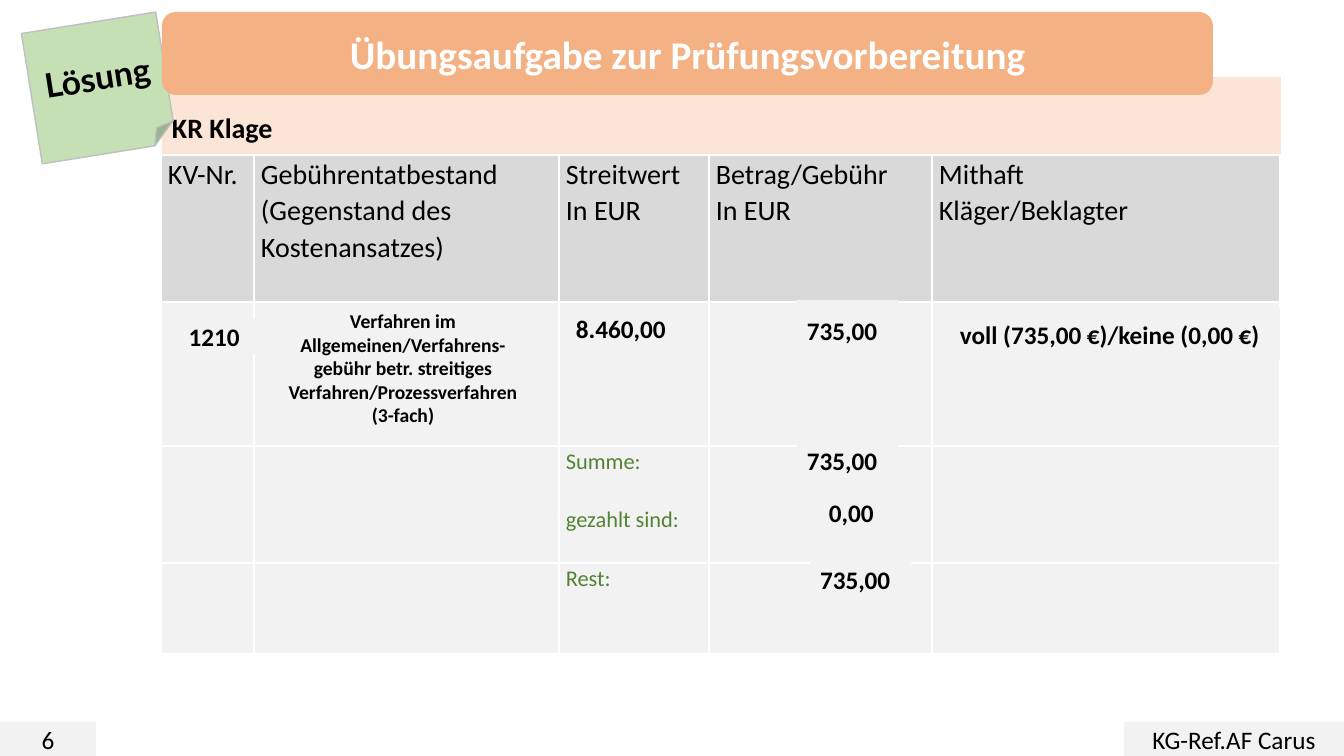
from dataclasses import dataclass

from lxml import etree
from pptx import Presentation
from pptx.dml.color import RGBColor
from pptx.enum.shapes import MSO_SHAPE as SHAPE
from pptx.enum.text import MSO_ANCHOR as ANCHOR, PP_ALIGN as ALIGN
from pptx.oxml.ns import qn
from pptx.util import Emu, Pt


@dataclass(frozen=True)
class Theme:
    font: str = "Calibri"
    note_font: str = "Lato"
    black: str = "000000"
    white: str = "FFFFFF"
    title_fill: str = "F4B183"
    band_fill: str = "FBE5D6"
    head_fill: str = "D9D9D9"
    cell_fill: str = "F2F2F2"
    note_fill: str = "C5E0B4"
    note_line: str = "BFBFBF"
    green: str = "548235"
    title: int = 28
    note: int = 24
    head: int = 20
    body: int = 18
    label: int = 16
    small: int = 14
    spacing: float = 1.07


T = Theme()

# Content; boxes are (left, top, width, height) in px
TITLE = ("Übungsaufgabe zur Prüfungsvorbereitung", (162, 12, 1051, 83))
BAND = ("KR Klage", (162, 77, 1119, 101))
NOTE = ("Lösung", (31, 22, 136, 132))
FOOTERS = [("6", (0, 722, 96, 34)), ("KG-Ref.AF Carus", (1124, 722, 220, 34))]

TABLE_AT = (161, 155)
COLUMNS = [93, 305, 150, 223, 348]
ROWS = [147, 144, 117, 91]
HEADER = [
    ["KV-Nr."],
    ["Gebührentatbestand", "(Gegenstand des Kostenansatzes)"],
    ["Streitwert", "In EUR"],
    ["Betrag/Gebühr", "In EUR"],
    ["Mithaft", "Kläger/Beklagter"],
]
LABEL_COLUMN = 2
LABELS = {2: ["Summe:", "gezahlt sind:"], 3: ["Rest:"]}
LABEL_GAP = 21  # points

# Left-aligned answers: text, box, left inset in px
ANSWERS = [
    ("8.460,00", (566, 307, 127, 41), 10),
    ("735,00", (797, 300, 101, 58), 10),
    ("voll (735,00 €)/keine (0,00 €)", (950, 307, 330, 52), 10),
    ("0,00", (797, 482, 101, 58), 32),
    ("735,00", (810, 559, 101, 38), 10),
    ("735,00", (797, 444, 101, 31), 10),
]
FEE_NUMBER = ("1210", (169, 319, 90, 35))
FEE_TEXT = (
    ["Verfahren im Allgemeinen/Verfahrens-gebühr betr. streitiges "
     "Verfahren/Prozessverfahren", "(3-fach)"],
    (276, 310, 254, 116),
)


def px(n):
    return Emu(round(n * 914400 / 100.8))


def rgb(value):
    return RGBColor.from_string(value)


def write(tf, lines, size, color=T.black, bold=False, font=T.font,
          align=ALIGN.LEFT, spacing=None, gap=0):
    for i, line in enumerate(lines):
        p = tf.paragraphs[0] if i == 0 else tf.add_paragraph()
        p.text = line
        p.alignment = align
        p.line_spacing = spacing
        if i and gap:
            p.space_before = Pt(gap)
        p.font.name, p.font.size, p.font.bold = font, Pt(size), bold
        p.font.color.rgb = rgb(color)


def add_box(shapes, lines, box, fill, size, kind=SHAPE.RECTANGLE,
            align=ALIGN.CENTER, inset=10, **style):
    sp = shapes.add_shape(kind, *map(px, box))
    sp.shadow.inherit = False
    sp.fill.solid()
    sp.fill.fore_color.rgb = rgb(fill)
    sp.line.fill.background()
    tf = sp.text_frame
    tf.word_wrap = True
    tf.vertical_anchor = ANCHOR.MIDDLE
    tf.margin_left = px(inset)
    write(tf, lines, size, align=align, **style)
    return sp


def style_cell(cell, fill):
    cell.fill.solid()
    cell.fill.fore_color.rgb = rgb(fill)
    cell.margin_left = cell.margin_right = px(7)
    cell.margin_top = cell.margin_bottom = 0
    tc_pr = cell._tc.get_or_add_tcPr()
    for i, side in enumerate(("lnL", "lnR", "lnT", "lnB")):
        ln = etree.Element(qn(f"a:{side}"), w=str(Pt(1)))
        solid = etree.SubElement(ln, qn("a:solidFill"))
        etree.SubElement(solid, qn("a:srgbClr"), val=T.white)
        tc_pr.insert(i, ln)


def add_fee_table(shapes):
    frame = shapes.add_table(len(ROWS), len(COLUMNS), *map(
        px, (*TABLE_AT, sum(COLUMNS), sum(ROWS))))
    table = frame.table
    table.first_row = table.horz_banding = False
    for column, width in zip(table.columns, COLUMNS):
        column.width = px(width)
    for row, height in zip(table.rows, ROWS):
        row.height = px(height)
    for r in range(len(ROWS)):
        for c in range(len(COLUMNS)):
            style_cell(table.cell(r, c), T.cell_fill if r else T.head_fill)
    for c, lines in enumerate(HEADER):
        write(table.cell(0, c).text_frame, lines, T.head, spacing=T.spacing)
    for r, lines in LABELS.items():
        write(table.cell(r, LABEL_COLUMN).text_frame, lines, T.label, T.green,
              spacing=T.spacing, gap=LABEL_GAP)


def main():
    prs = Presentation()
    prs.slide_width, prs.slide_height = px(1344), px(756)
    shapes = prs.slides.add_slide(prs.slide_layouts[6]).shapes

    # Heading band and table
    text, box = BAND
    add_box(shapes, [text], box, T.band_fill, T.head, align=ALIGN.LEFT, bold=True)
    add_fee_table(shapes)

    # Tilted note
    text, box = NOTE
    note = add_box(shapes, [text], box, T.note_fill, T.note, SHAPE.FOLDED_CORNER,
                   bold=True, font=T.note_font)
    note.rotation = 350.9
    note.line.color.rgb = rgb(T.note_line)
    note.line.width = Pt(1)

    # Footer
    for text, box in FOOTERS:
        add_box(shapes, [text], box, T.cell_fill, T.body)

    # Answers over the table
    for text, box, inset in ANSWERS:
        add_box(shapes, [text], box, T.cell_fill, T.body, align=ALIGN.LEFT,
                inset=inset, bold=True, spacing=T.spacing)
    text, box = FEE_NUMBER
    add_box(shapes, [text], box, T.cell_fill, T.body, bold=True)
    lines, box = FEE_TEXT
    add_box(shapes, lines, box, T.cell_fill, T.small, bold=True)

    # Title
    text, box = TITLE
    add_box(shapes, [text], box, T.title_fill, T.title, SHAPE.ROUNDED_RECTANGLE,
            color=T.white, bold=True)

    prs.save("out.pptx")


if __name__ == "__main__":
    main()
